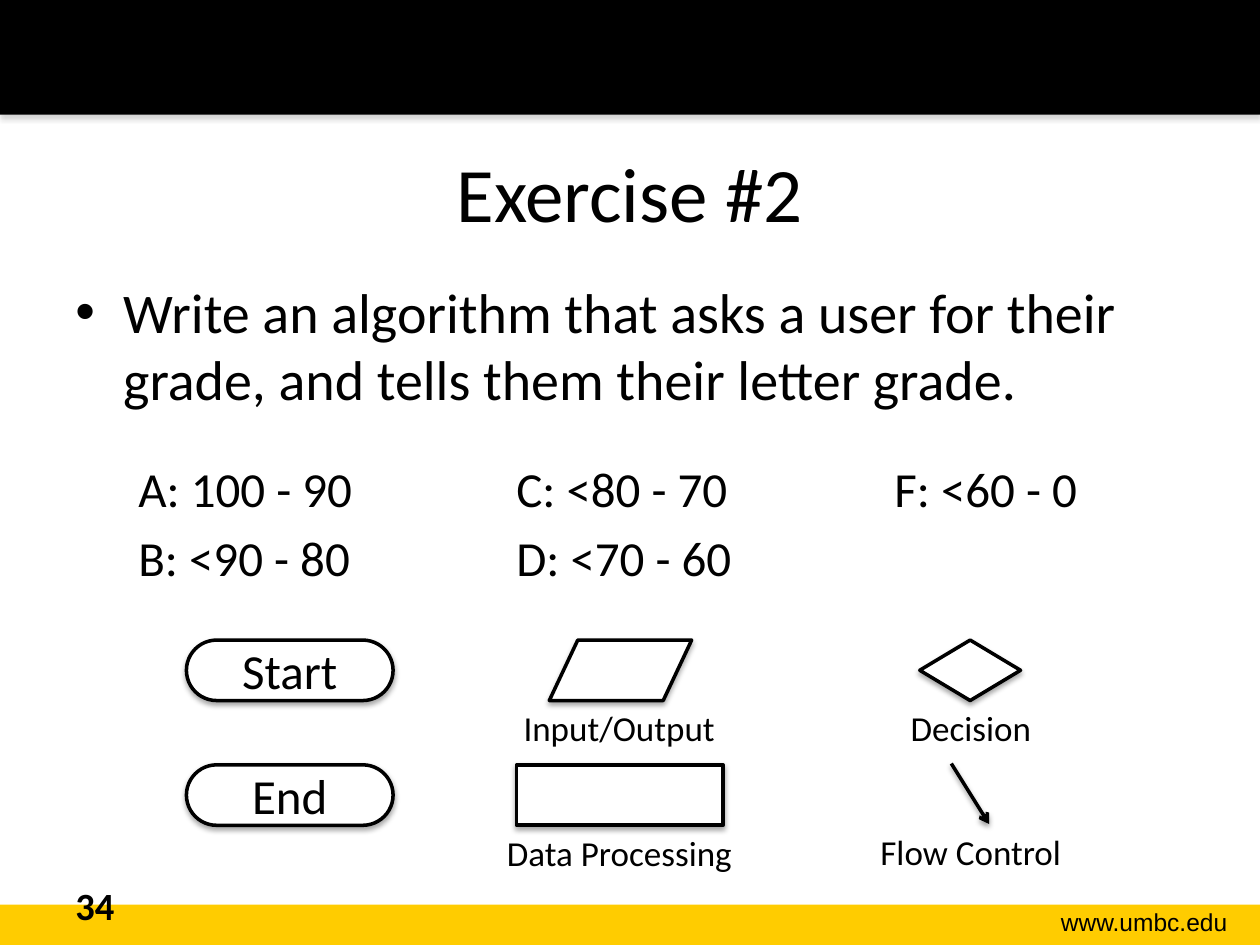
from typing import NamedTuple

from lxml import etree
from pptx import Presentation
from pptx.dml.color import RGBColor
from pptx.enum.shapes import MSO_CONNECTOR, MSO_SHAPE
from pptx.enum.text import MSO_ANCHOR, PP_ALIGN
from pptx.oxml.ns import qn
from pptx.util import Inches, Pt

RECTANGLE = MSO_SHAPE.RECTANGLE
ROUNDED = MSO_SHAPE.ROUNDED_RECTANGLE
DIAMOND = MSO_SHAPE.DIAMOND
DATA = MSO_SHAPE.FLOWCHART_DATA
STRAIGHT = MSO_CONNECTOR.STRAIGHT
LEFT, CENTER, RIGHT = PP_ALIGN.LEFT, PP_ALIGN.CENTER, PP_ALIGN.RIGHT
TOP, MIDDLE = MSO_ANCHOR.TOP, MSO_ANCHOR.MIDDLE
BLACK, WHITE, GOLD, GRAY = "000000", "FFFFFF", "FFCC00", "808080"
SYMBOL_HEIGHT = 0.48
UPPER_ROW, LOWER_ROW = 5.08, 6.07


class Place(NamedTuple):
    left: float
    top: float
    width: float
    height: float


class Symbol(NamedTuple):
    kind: MSO_SHAPE
    left: float
    top: float
    width: float
    text: str = ""


class Label(NamedTuple):
    text: str
    place: Place


SYMBOLS = [
    Symbol(ROUNDED, 1.48, UPPER_ROW, 1.64, "Start"),
    Symbol(ROUNDED, 1.48, LOWER_ROW, 1.64, "End"),
    Symbol(DIAMOND, 7.3, UPPER_ROW, 0.8),
    Symbol(RECTANGLE, 4.1, LOWER_ROW, 1.64),
    Symbol(DATA, 4.36, UPPER_ROW, 1.13),
]
LABELS = [
    Label("Data Processing", Place(3.69, 6.55, 2.45, 0.44)),
    Label("Input/Output", Place(3.98, 5.56, 1.87, 0.44)),
    Label("Decision", Place(6.77, 5.56, 1.87, 0.44)),
    Label("Flow Control", Place(6.77, 6.54, 1.87, 0.44)),
]
GRADES = ["A: 100 - 90\tC: <80 - 70\tF: <60 - 0", "B: <90 - 80\tD: <70 - 60"]
GRADE_TABS = [3, 6]


def color(value: str) -> RGBColor:
    """Turn a hex string into a colour."""
    return RGBColor.from_string(value)


def add_child(parent, tag: str, **attributes):
    """Append a child element with the given attributes."""
    names = {name: str(value) for name, value in attributes.items()}
    return etree.SubElement(parent, qn(tag), names)


def add_shadow(properties, tint: str, opacity: int = 35, distance: float = 1.8) -> None:
    """Give shape properties a soft shadow that falls straight down."""
    effects = add_child(properties, "a:effectLst")
    shadow = add_child(effects, "a:outerShdw", blurRad=Pt(3.1), dist=Pt(distance),
                       dir=90 * 60000, rotWithShape=0)
    shade = add_child(shadow, "a:srgbClr", val=tint)
    add_child(shade, "a:alpha", val=opacity * 1000)


def style_font(paragraph, size: int, name: str = "Calibri", bold: bool = False) -> None:
    """Set the font of a whole paragraph."""
    font = paragraph.font
    font.size, font.name, font.bold = Pt(size), name, bold
    font.color.rgb = color(BLACK)


def add_text(page, place: Place, lines: list[str], size: int, align=LEFT,
             anchor=TOP, name: str = "Calibri", bold: bool = False,
             tabs: tuple | list = (), bullet: str = ""):
    """Add a wrapped text box with one paragraph per line."""
    box = page.shapes.add_textbox(*map(Inches, place))
    frame = box.text_frame
    frame.word_wrap = True
    frame.vertical_anchor = anchor
    for index, line in enumerate(lines):
        para = frame.paragraphs[0] if index == 0 else frame.add_paragraph()
        para.text = line
        para.alignment = align
        if index:
            para.space_before = Pt(size * 0.2)
        properties = para._p.get_or_add_pPr()
        if bullet:
            properties.set("marL", str(Inches(0.38)))
            properties.set("indent", str(-Inches(0.38)))
            add_child(properties, "a:buFont", typeface="Arial")
            add_child(properties, "a:buChar", char=bullet)
        if tabs:
            stops = add_child(properties, "a:tabLst")
            for position in tabs:
                add_child(stops, "a:tab", pos=Inches(position), algn="l")
        style_font(para, size, name, bold)
    return box


def add_band(page, place: Place, fill: str):
    """Add a borderless band across the page."""
    band = page.shapes.add_shape(RECTANGLE, *map(Inches, place))
    band.fill.solid()
    band.fill.fore_color.rgb = color(fill)
    band.line.fill.background()
    return band


def add_symbol(page, symbol: Symbol) -> None:
    """Add one outlined flowchart symbol."""
    place = Place(symbol.left, symbol.top, symbol.width, SYMBOL_HEIGHT)
    shape = page.shapes.add_shape(symbol.kind, *map(Inches, place))
    if symbol.kind == ROUNDED:
        shape.adjustments[0] = 0.5
    shape.fill.solid()
    shape.fill.fore_color.rgb = color(WHITE)
    shape.line.color.rgb = color(BLACK)
    shape.line.width = Pt(2)
    add_shadow(shape._element.spPr, BLACK)
    if symbol.text:
        frame = shape.text_frame
        frame.vertical_anchor = MIDDLE
        para = frame.paragraphs[0]
        para.text = symbol.text
        para.alignment = CENTER
        style_font(para, 28)


def add_flow_arrow(page) -> None:
    """Add the flow control arrow."""
    arrow = page.shapes.add_connector(STRAIGHT, *map(Inches, (7.55, 6.06, 7.85, 6.54)))
    arrow.line.color.rgb = color(BLACK)
    arrow.line.width = Pt(2)
    add_child(arrow.line._get_or_add_ln(), "a:tailEnd", type="arrow")
    add_shadow(arrow._element.spPr, BLACK, 38, 1.6)


def main() -> None:
    """Build and save the slide."""
    deck = Presentation()
    deck.slide_width, deck.slide_height = Inches(10), Inches(7.5)
    page = deck.slides.add_slide(deck.slide_layouts[6])
    footer = add_band(page, Place(0, 7.18, 10, 0.32), GOLD)
    footer.shadow.inherit = False
    header = add_band(page, Place(0, 0, 10, 0.91), BLACK)
    add_shadow(header._element.spPr, GRAY)
    add_text(page, Place(7.85, 7.15, 1.99, 0.34), ["www.umbc.edu"], 14, RIGHT, name="Arial")
    add_text(page, Place(0.5, 0.9, 9, 1.25), ["Exercise #2"], 44, CENTER, MIDDLE)
    task = "Write an algorithm that asks a user for their grade, and tells them their letter grade."
    add_text(page, Place(0.5, 2.15, 9, 1.3), [task], 32, bullet="•")
    add_text(page, Place(1, 3.59, 8.5, 1.15), GRADES, 28, tabs=GRADE_TABS)
    add_text(page, Place(0.5, 6.95, 2.33, 0.4), ["34"], 22, bold=True)
    for symbol in SYMBOLS:
        add_symbol(page, symbol)
    add_flow_arrow(page)
    for label in LABELS:
        add_text(page, label.place, [label.text], 20, CENTER)
    deck.save("out.pptx")


if __name__ == "__main__":
    main()
